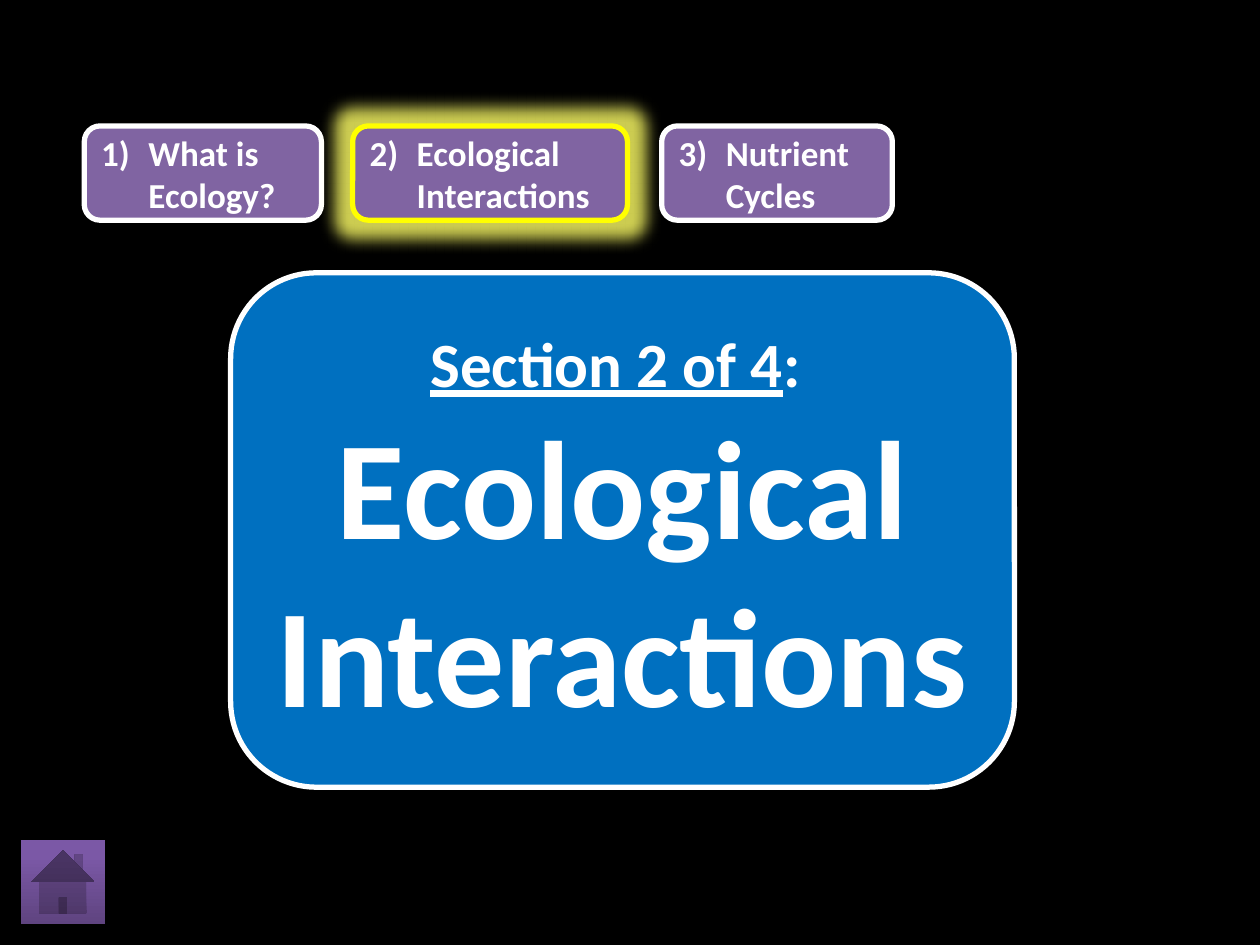
from dataclasses import dataclass

from lxml.etree import SubElement
from pptx import Presentation
from pptx.dml.color import RGBColor
from pptx.enum.shapes import MSO_SHAPE
from pptx.enum.text import MSO_ANCHOR, PP_ALIGN
from pptx.oxml.ns import qn
from pptx.util import Cm, Pt


@dataclass(frozen=True)
class Theme:
    font: str = "Calibri"
    black: RGBColor = RGBColor(0x00, 0x00, 0x00)
    white: RGBColor = RGBColor(0xFF, 0xFF, 0xFF)
    blue: RGBColor = RGBColor(0x00, 0x70, 0xC0)
    purple: RGBColor = RGBColor(0x80, 0x64, 0xA2)
    yellow: RGBColor = RGBColor(0xFF, 0xFF, 0x00)
    glow: str = "FFFF66"
    home_dark: RGBColor = RGBColor(0x5F, 0x44, 0x80)
    home_light: RGBColor = RGBColor(0x7B, 0x58, 0xA6)
    tab_size: Pt = Pt(20)
    section_size: Pt = Pt(36)
    title_size: Pt = Pt(80)
    outline: Pt = Pt(3)


THEME = Theme()


def add_card(s, left, top, width, height, fill, line):
    """Add a rounded, outlined box with middle-anchored text."""
    sp = s.shapes.add_shape(MSO_SHAPE.ROUNDED_RECTANGLE,
                            Cm(left), Cm(top), Cm(width), Cm(height))
    sp.shadow.inherit = False
    sp.fill.solid()
    sp.fill.fore_color.rgb = fill
    sp.line.color.rgb = line
    sp.line.width = THEME.outline
    sp.text_frame.word_wrap = True
    sp.text_frame.vertical_anchor = MSO_ANCHOR.MIDDLE
    return sp


def style_paragraph(p, size, align):
    p.alignment = align
    p.font.name = THEME.font
    p.font.size = size
    p.font.bold = True
    p.font.color.rgb = THEME.white


def add_glow(sp, radius):
    effects = sp._element.spPr.find(qn("a:effectLst"))
    glow = SubElement(effects, qn("a:glow"), rad=str(radius))
    color = SubElement(glow, qn("a:srgbClr"), val=THEME.glow)
    SubElement(color, qn("a:alpha"), val="80000")


def add_navigation(s, left, top, height, tabs, current):
    """Row of section tabs; the current one is highlighted."""
    for number, (offset, width, label) in enumerate(tabs, 1):
        active = number == current
        sp = add_card(s, left + offset, top, width, height, THEME.purple,
                      THEME.yellow if active else THEME.white)
        if active:
            add_glow(sp, Pt(18))
        p = sp.text_frame.paragraphs[0]
        p.text = f"{number})\t{label}"
        style_paragraph(p, THEME.tab_size, PP_ALIGN.LEFT)
        # Hanging indent keeps wrapped words clear of the number
        pPr = p._p.get_or_add_pPr()
        pPr.set("marL", str(Cm(0.95)))
        pPr.set("indent", str(-Cm(0.95)))


def add_section_title(s, left, top, width, height, section, title):
    """Large panel with the section number above its title."""
    sp = add_card(s, left, top, width, height, THEME.blue, THEME.white)
    tf = sp.text_frame
    p = tf.paragraphs[0]
    style_paragraph(p, THEME.section_size, PP_ALIGN.CENTER)
    for text, underline in ((section, True), (": ", False)):
        r = p.add_run()
        r.text = text
        r.font.underline = underline
    p = tf.add_paragraph()
    p.text = title
    style_paragraph(p, THEME.title_size, PP_ALIGN.CENTER)


def add_home_button(s, left, top, size):
    sp = s.shapes.add_shape(MSO_SHAPE.ACTION_BUTTON_HOME,
                            Cm(left), Cm(top), Cm(size), Cm(size))
    sp.shadow.inherit = False
    sp.line.fill.background()
    sp.fill.gradient()
    sp.fill.gradient_angle = 90
    colors = ((0, THEME.home_dark), (0.8, THEME.home_light))
    for stop, (position, color) in zip(sp.fill.gradient_stops, colors):
        stop.position = position
        stop.color.rgb = color


def main():
    prs = Presentation()
    prs.slide_width, prs.slide_height = Cm(25.4), Cm(19.05)
    s = prs.slides.add_slide(prs.slide_layouts[6])
    s.background.fill.solid()
    s.background.fill.fore_color.rgb = THEME.black

    # Section panel
    add_section_title(s, 4.65, 5.5, 15.8, 10.37,
                      "Section 2 of 4", "Ecological Interactions")
    # Home button
    add_home_button(s, 0.42, 16.93, 1.7)
    # Navigation tabs: offset, width, label
    tabs = [(0, 4.78, "What is Ecology?"),
            (5.41, 5.54, "Ecological Interactions"),
            (11.64, 4.65, "Nutrient Cycles")]
    add_navigation(s, 1.7, 2.54, 1.9, tabs, current=2)

    prs.save("out.pptx")


if __name__ == "__main__":
    main()
